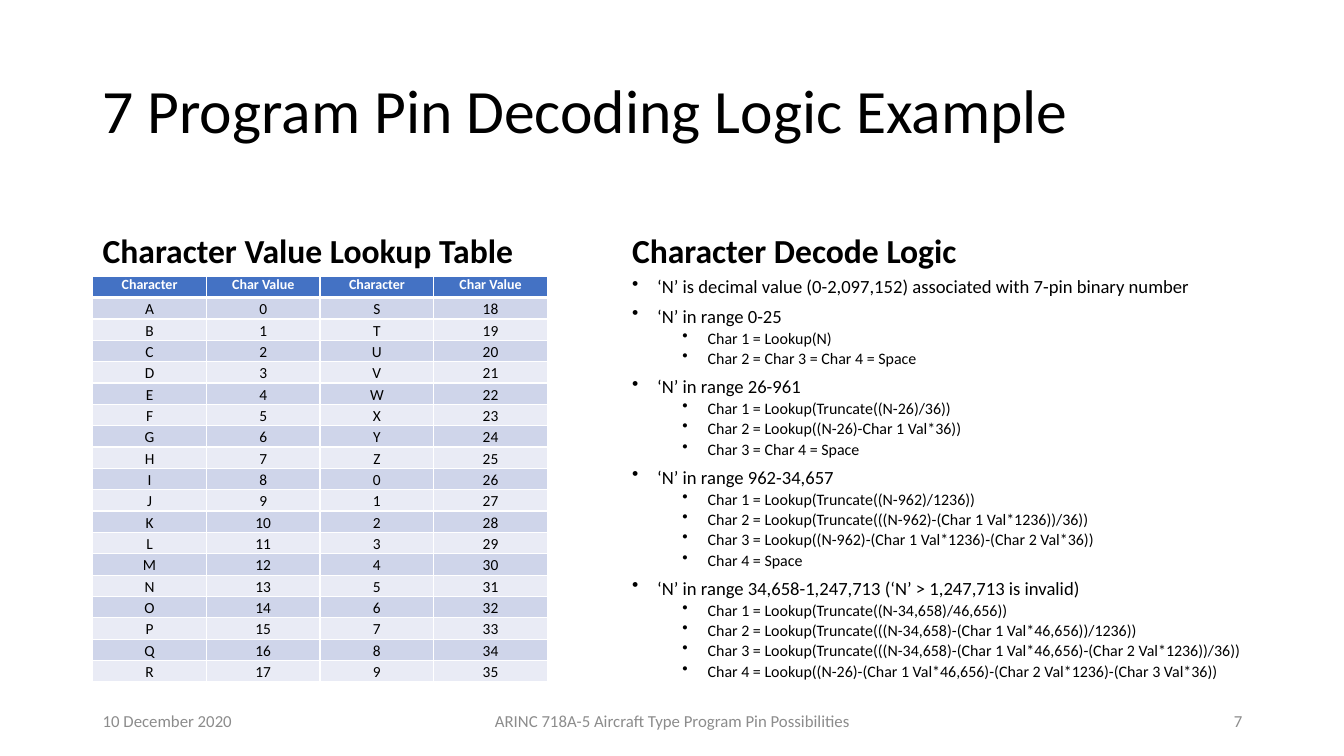
from lxml import etree
from pptx import Presentation
from pptx.dml.color import RGBColor
from pptx.enum.text import MSO_ANCHOR, PP_ALIGN
from pptx.oxml.ns import qn
from pptx.util import Inches, Pt

BLACK = RGBColor(0x00, 0x00, 0x00)
WHITE = RGBColor(0xFF, 0xFF, 0xFF)
GRAY = RGBColor(0x8C, 0x8C, 0x8C)
HEADER_BLUE = RGBColor(0x44, 0x72, 0xC4)
BAND_DARK = RGBColor(0xCF, 0xD5, 0xEA)
BAND_LIGHT = RGBColor(0xE9, 0xEB, 0xF5)

TOP, MIDDLE, BOTTOM = MSO_ANCHOR.TOP, MSO_ANCHOR.MIDDLE, MSO_ANCHOR.BOTTOM
LEFT, CENTER, RIGHT = PP_ALIGN.LEFT, PP_ALIGN.CENTER, PP_ALIGN.RIGHT

FONT = "Calibri"
CHARACTERS = "ABCDEFGHIJKLMNOPQRSTUVWXYZ0123456789"
TABLE_HEADINGS = ("Character", "Char Value") * 2
DECODE_LOGIC = [
    ("‘N’ is decimal value (0-2,097,152) associated with 7-pin binary number", []),
    ("‘N’ in range 0-25", [
        "Char 1 = Lookup(N)",
        "Char 2 = Char 3 = Char 4 = Space",
    ]),
    ("‘N’ in range 26-961", [
        "Char 1 = Lookup(Truncate((N-26)/36))",
        "Char 2 = Lookup((N-26)-Char 1 Val*36))",
        "Char 3 = Char 4 = Space",
    ]),
    ("‘N’ in range 962-34,657", [
        "Char 1 = Lookup(Truncate((N-962)/1236))",
        "Char 2 = Lookup(Truncate(((N-962)-(Char 1 Val*1236))/36))",
        "Char 3 = Lookup((N-962)-(Char 1 Val*1236)-(Char 2 Val*36))",
        "Char 4 = Space",
    ]),
    ("‘N’ in range 34,658-1,247,713 (‘N’ > 1,247,713 is invalid)", [
        "Char 1 = Lookup(Truncate((N-34,658)/46,656))",
        "Char 2 = Lookup(Truncate(((N-34,658)-(Char 1 Val*46,656))/1236))",
        "Char 3 = Lookup(Truncate(((N-34,658)-(Char 1 Val*46,656)-(Char 2 Val*1236))/36))",
        "Char 4 = Lookup((N-26)-(Char 1 Val*46,656)-(Char 2 Val*1236)-(Char 3 Val*36))",
    ]),
]


def add_span(para, text, size, color=BLACK, bold=False):
    span = para.add_run()
    span.text = text
    span.font.name = FONT
    span.font.size = Pt(size)
    span.font.color.rgb = color
    span.font.bold = bold


def add_frame(page, box, anchor):
    """Add an empty wrapping text box and return its text frame."""
    frame = page.shapes.add_textbox(*map(Inches, box)).text_frame
    frame.word_wrap = True
    frame.vertical_anchor = anchor
    return frame


def add_line(page, box, text, size, anchor=MIDDLE, align=LEFT, color=BLACK,
             bold=False, line_spacing=1.0, space_before=0):
    para = add_frame(page, box, anchor).paragraphs[0]
    para.alignment = align
    para.line_spacing = line_spacing
    para.space_before = Pt(space_before)
    add_span(para, text, size, color, bold)


def add_heading(page, box, text):
    add_line(page, box, text, 24, BOTTOM, bold=True, line_spacing=0.9, space_before=10)


def set_borders(cell, widths):
    """Draw white borders; widths are points for left, right, top and bottom."""
    properties = cell._tc.get_or_add_tcPr()
    for side, width in zip("LRTB", widths):
        line = etree.SubElement(properties, qn(f"a:ln{side}"), w=str(Pt(width)))
        fill = etree.SubElement(line, qn("a:solidFill"))
        etree.SubElement(fill, qn("a:srgbClr"), val=str(WHITE))


def fill_cell(cell, text, row_index):
    is_header = row_index == 0
    inset = Inches(0 if is_header else 0.01)
    cell.margin_left = cell.margin_right = cell.margin_top = inset
    cell.margin_bottom = 0
    cell.vertical_anchor = TOP if is_header else BOTTOM
    set_borders(cell, (1, 1, 3 if row_index == 1 else 1, 3 if is_header else 1))
    cell.fill.solid()
    para = cell.text_frame.paragraphs[0]
    para.alignment = CENTER
    if is_header:
        cell.fill.fore_color.rgb = HEADER_BLUE
        add_span(para, text, 10, WHITE, bold=True)
    else:
        cell.fill.fore_color.rgb = BAND_DARK if row_index % 2 else BAND_LIGHT
        add_span(para, text, 11)


def add_lookup_table(page, box):
    """List each character with its value, in two halves side by side."""
    half = len(CHARACTERS) // 2
    rows = [TABLE_HEADINGS]
    for value in range(half):
        rows.append((CHARACTERS[value], str(value),
                     CHARACTERS[value + half], str(value + half)))
    left, top, width, height = map(Inches, box)
    table = page.shapes.add_table(len(rows), len(TABLE_HEADINGS),
                                  left, top, width, height).table
    for row_index, texts in enumerate(rows):
        table.rows[row_index].height = height // len(rows)
        for column_index, text in enumerate(texts):
            fill_cell(table.cell(row_index, column_index), text, row_index)


def add_bullet(para, text, level):
    para.level = level
    para.line_spacing = 0.7
    para.space_before = Pt(5 if level else 10)
    properties = para._p.get_or_add_pPr()
    properties.set("marL", str(Inches(0.75 if level else 0.25)))
    properties.set("indent", str(Inches(-0.25)))
    etree.SubElement(properties, qn("a:buChar"), char="•")
    add_span(para, text, 11.4 if level else 13.3)


def add_decode_logic(page, box):
    frame = add_frame(page, box, TOP)
    bullets = []
    for rule, steps in DECODE_LOGIC:
        bullets.append((rule, 0))
        bullets.extend((step, 1) for step in steps)
    for index, (text, level) in enumerate(bullets):
        para = frame.add_paragraph() if index else frame.paragraphs[0]
        add_bullet(para, text, level)


def add_footer(page, box):
    left, top, width, height = box
    side, middle = 3, 4.5
    parts = [
        (left, side, "10 December 2020", LEFT),
        (left + (width - middle) / 2, middle,
         "ARINC 718A-5 Aircraft Type Program Pin Possibilities", CENTER),
        (left + width - side, side, "7", RIGHT),
    ]
    for part_left, part_width, text, align in parts:
        add_line(page, (part_left, top, part_width, height), text, 12,
                 align=align, color=GRAY)


def add_comparison_page(deck):
    page = deck.slides.add_slide(deck.slide_layouts[6])
    add_line(page, (0.92, 0.4, 11.5, 1.45), "7 Program Pin Decoding Logic Example",
             44, line_spacing=0.9)
    add_heading(page, (0.92, 1.84, 5.64, 0.9), "Character Value Lookup Table")
    add_lookup_table(page, (0.92, 2.74, 4.51, 4.03))
    add_heading(page, (6.17, 1.84, 6.25, 0.9), "Character Decode Logic")
    add_decode_logic(page, (6.17, 2.74, 6.25, 4.03))
    add_footer(page, (0.92, 6.95, 11.5, 0.4))


def main():
    deck = Presentation()
    deck.slide_width = Inches(13.33)
    deck.slide_height = Inches(7.5)
    add_comparison_page(deck)
    deck.save("out.pptx")


if __name__ == "__main__":
    main()
